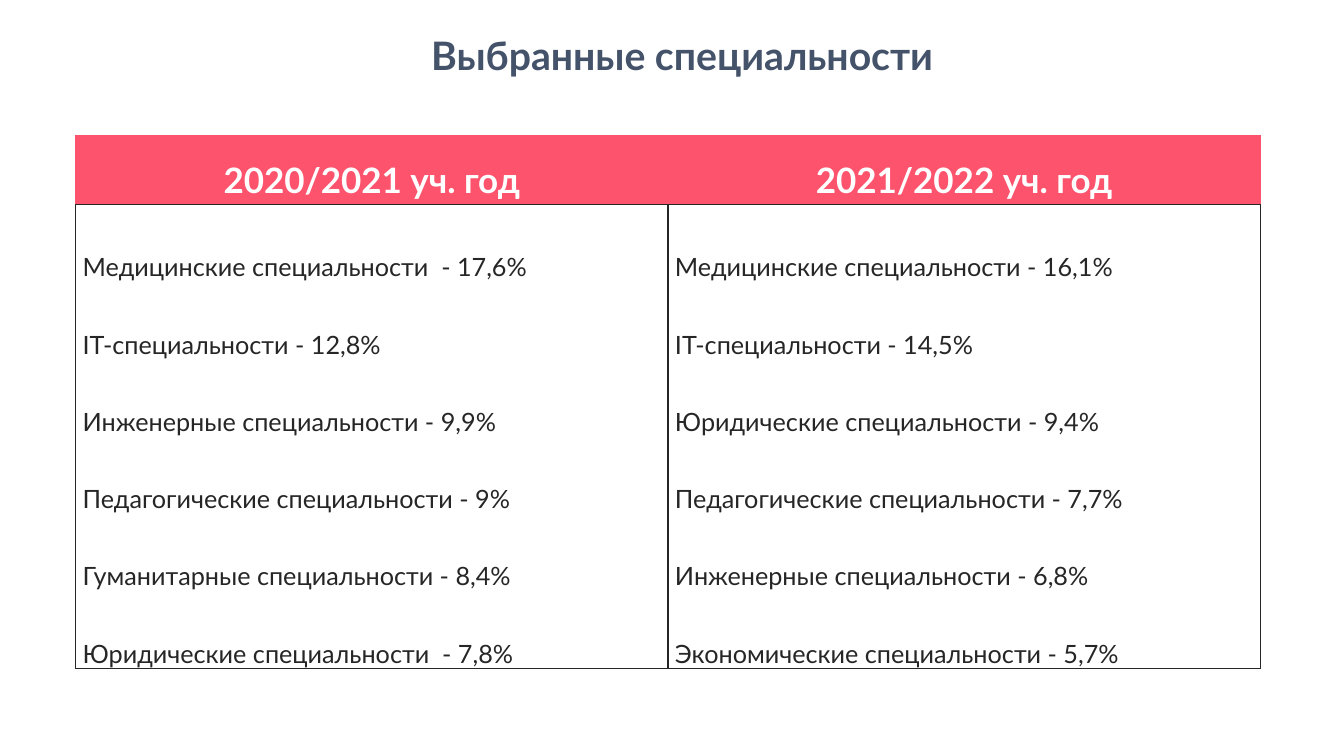
from lxml import etree
from pptx import Presentation
from pptx.dml.color import RGBColor
from pptx.enum.text import MSO_ANCHOR as Anchor, MSO_AUTO_SIZE as AutoSize, PP_ALIGN as Align
from pptx.oxml.ns import qn
from pptx.util import Inches, Pt

FONT = "Lato"
WHITE = RGBColor(0xFF, 0xFF, 0xFF)
SLATE = RGBColor(0x44, 0x53, 0x6A)
PINK = RGBColor(0xFD, 0x53, 0x6D)
DARK = RGBColor(0x26, 0x26, 0x26)

TITLE = "Выбранные специальности"
YEARS = {
    "2020/2021 уч. год": [
        "Медицинские специальности  - 17,6%",
        "IT-специальности - 12,8%",
        "Инженерные специальности - 9,9%",
        "Педагогические специальности - 9%",
        "Гуманитарные специальности - 8,4%",
        "Юридические специальности  - 7,8%",
    ],
    "2021/2022 уч. год": [
        "Медицинские специальности - 16,1%",
        "IT-специальности - 14,5%",
        "Юридические специальности - 9,4%",
        "Педагогические специальности - 7,7%",
        "Инженерные специальности - 6,8%",
        "Экономические специальности - 5,7%",
    ],
}


def format_paragraph(paragraph, size, color, bold=False):
    font = paragraph.font
    font.name, font.size, font.bold = FONT, Pt(size), bold
    font.color.rgb = color


def format_heading(paragraph, size, color):
    format_paragraph(paragraph, size, color, bold=True)
    paragraph.alignment = Align.CENTER
    paragraph.line_spacing = 1.5


def set_borders(cell, sides):
    properties = cell._tc.get_or_add_tcPr()
    for side, (color, width) in sides.items():
        line = etree.SubElement(properties, qn(f"a:ln{side}"), w=str(Pt(width)))
        fill = etree.SubElement(line, qn("a:solidFill"))
        etree.SubElement(fill, qn("a:srgbClr"), val=str(color))


def set_margins(cell, top=0):
    cell.margin_left = cell.margin_right = Inches(0.07)
    cell.margin_top, cell.margin_bottom = Inches(top), 0


def fill_header(cell, year):
    set_margins(cell)
    cell.vertical_anchor = Anchor.MIDDLE
    cell.text = year
    format_heading(cell.text_frame.paragraphs[0], 25, WHITE)
    set_borders(cell, {**dict.fromkeys("LRT", (PINK, 0.5)), "B": (DARK, 1)})
    cell.fill.solid()
    cell.fill.fore_color.rgb = PINK


def fill_body(cell, specialties):
    set_margins(cell, top=0.47)
    cell.vertical_anchor = Anchor.TOP
    cell.text = "\n".join(specialties)
    for index, paragraph in enumerate(cell.text_frame.paragraphs):
        format_paragraph(paragraph, 18, DARK)
        paragraph.space_before = Pt(33.6 if index else 0)
    set_borders(cell, dict.fromkeys("LRTB", (DARK, 1)))
    cell.fill.background()


def add_title(slide):
    title = slide.shapes.title
    title.left, title.top = Inches(0.48), Inches(0.03)
    title.width, title.height = Inches(12.57), Inches(0.72)
    frame = title.text_frame
    frame.text = TITLE
    frame.word_wrap = True
    frame.auto_size = AutoSize.NONE
    frame.vertical_anchor = Anchor.TOP
    format_heading(frame.paragraphs[0], 28, SLATE)


def add_specialty_table(slide):
    table = slide.shapes.add_table(
        2, len(YEARS), Inches(0.75), Inches(1.34), Inches(11.75), Inches(5.29)
    ).table
    table.horz_banding = False
    table.rows[0].height, table.rows[1].height = Inches(0.69), Inches(4.6)
    for column, (year, specialties) in enumerate(YEARS.items()):
        fill_header(table.cell(0, column), year)
        fill_body(table.cell(1, column), specialties)


def main():
    presentation = Presentation()
    presentation.slide_width = Inches(13.33)
    presentation.slide_height = Inches(7.5)
    slide = presentation.slides.add_slide(presentation.slide_layouts[5])
    add_title(slide)
    add_specialty_table(slide)
    presentation.save("out.pptx")


if __name__ == "__main__":
    main()
